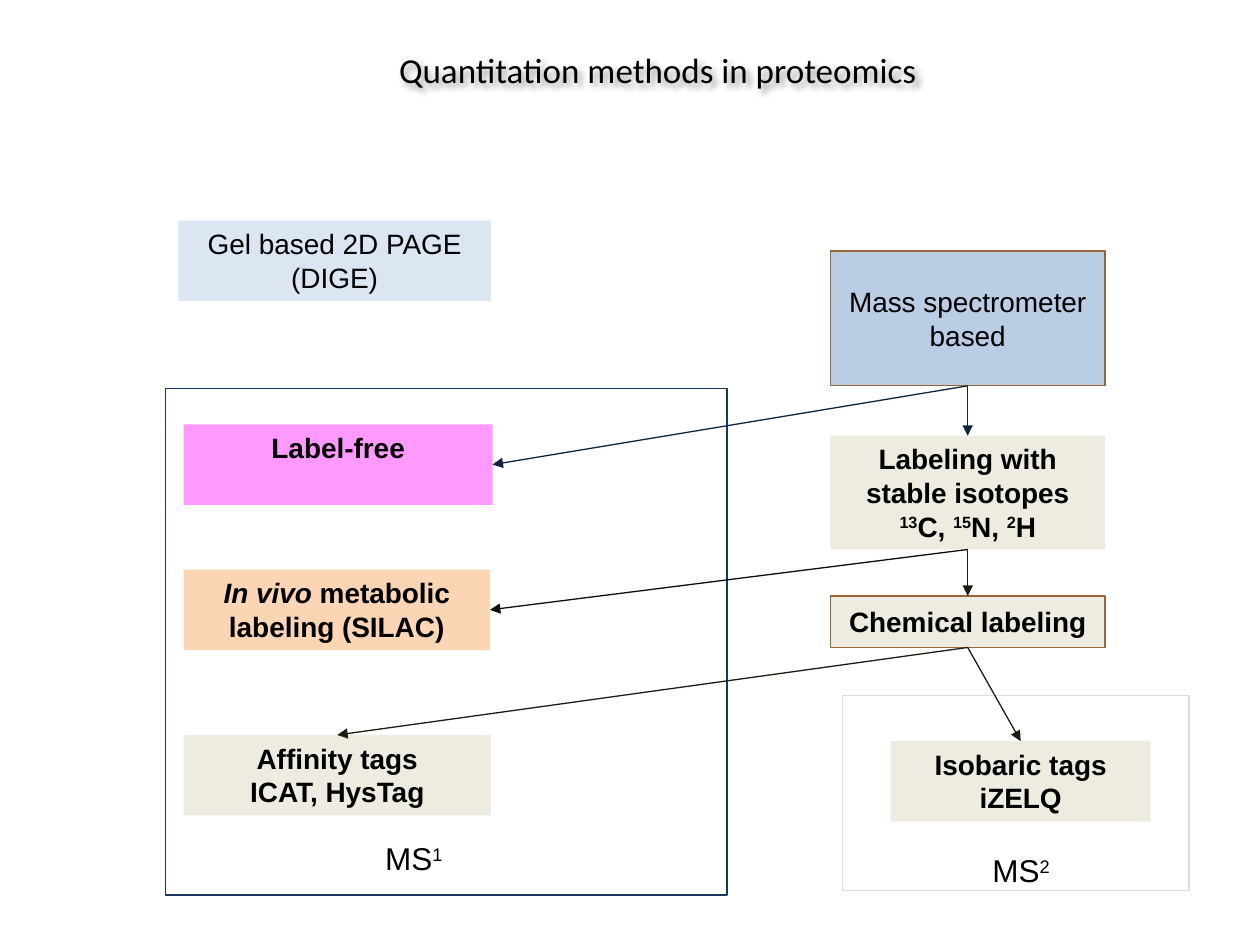
from lxml.etree import SubElement
from pptx import Presentation
from pptx.dml.color import RGBColor
from pptx.enum.shapes import MSO_CONNECTOR, MSO_SHAPE
from pptx.enum.text import MSO_ANCHOR, PP_ALIGN
from pptx.oxml import parse_xml
from pptx.oxml.ns import nsdecls, qn
from pptx.util import Pt

COLORS = {
    "text": "000000", "gel": "DCE6F2", "spectrometer": "B9CDE5", "label_free": "FF99FF",
    "metabolic": "FCD5B5", "chemistry": "EEECE1", "brown": "996633",
    "ms1_frame": "17375E", "ms2_frame": "DDDDDD", "shadow": "000000",
    "navy": "0F243E", "black": "0D0D0D", "olive": "1E1C11",
}
BOTTOM, TOP, RIGHT = 2, 0, 3
PAIR_HEIGHT = 46


def color(name):
    """Return the named colour."""
    return RGBColor.from_string(COLORS[name])


def write_text(shape, lines, size, font="Arial", bold=False, align=PP_ALIGN.CENTER):
    """Fill a shape with lines, each a list of (text, style) runs."""
    frame = shape.text_frame
    for index, line in enumerate(lines):
        paragraph = frame.paragraphs[0] if index == 0 else frame.add_paragraph()
        paragraph.alignment = align
        paragraph.font.name = font
        paragraph.font.size = Pt(size)
        paragraph.font.bold = bold
        paragraph.font.color.rgb = color("text")
        for text, style in line:
            run = paragraph.add_run()
            run.text = text
            if style == "italic":
                run.font.italic = True
            elif style == "super":
                run.font._element.set("baseline", "30000")


def add_box(slide, box, fill=None, border=None):
    """Add a rectangle with an optional fill and border."""
    shape = slide.shapes.add_shape(MSO_SHAPE.RECTANGLE, *map(Pt, box))
    shape.shadow.inherit = False
    if fill:
        shape.fill.solid()
        shape.fill.fore_color.rgb = color(fill)
    else:
        shape.fill.background()
    if border:
        shape.line.color.rgb = color(border)
        shape.line.width = Pt(0.75)
    else:
        shape.line.fill.background()
    return shape


def add_method(slide, box, lines, fill, border=None, bold=True):
    """Add a method box; bordered boxes centre their text without wrapping."""
    shape = add_box(slide, box, fill, border)
    shape.text_frame.word_wrap = border is None
    shape.text_frame.vertical_anchor = MSO_ANCHOR.MIDDLE if border else MSO_ANCHOR.TOP
    write_text(shape, lines, 16, bold=bold)
    return shape


def add_level(slide, left, top, number):
    """Add an MS level caption."""
    caption = slide.shapes.add_textbox(Pt(left), Pt(top), Pt(48), Pt(29))
    caption.text_frame.word_wrap = False
    write_text(caption, [[("MS", None), (number, "super")]], 18, align=PP_ALIGN.LEFT)


def add_arrow(slide, source, target, target_side, line_color):
    """Join the bottom of one box to a side of another with an arrow."""
    arrow = slide.shapes.add_connector(MSO_CONNECTOR.STRAIGHT, 0, 0, 0, 0)
    arrow.begin_connect(source, BOTTOM)
    arrow.end_connect(target, target_side)
    arrow.line.color.rgb = color(line_color)
    arrow.line.width = Pt(0.75)
    SubElement(arrow.line._get_or_add_ln(), qn("a:tailEnd"), type="triangle")
    SubElement(arrow._element.spPr, qn("a:effectLst"))


def add_title(slide, box):
    """Add the shadowed slide title."""
    title = slide.shapes.add_textbox(*map(Pt, box))
    title.text_frame.word_wrap = True
    title.text_frame.margin_left = Pt(60)
    write_text(title, [[("Quantitation methods in proteomics", None)]], 20, "Calibri",
               align=PP_ALIGN.LEFT)
    title._element.spPr.append(parse_xml(
        f'<a:effectLst {nsdecls("a")}><a:outerShdw blurRad="50800" dist="38100" dir="2700000">'
        f'<a:srgbClr val="{COLORS["shadow"]}"><a:alpha val="40000"/></a:srgbClr>'
        '</a:outerShdw></a:effectLst>'))


def add_ms1_panel(slide, box):
    """Add the MS1 frame and return its three method boxes."""
    left, top = box[:2]
    methods = [
        (20.5, 176.5, "label_free", [[("Label-free", None)]]),
        (103.5, 175, "metabolic",
         [[("In vivo", "italic"), (" metabolic labeling (SILAC)", None)]]),
        (198, 175.5, "chemistry", [[("Affinity tags", None)], [("ICAT, HysTag", None)]]),
    ]
    add_box(slide, box, border="ms1_frame")
    add_level(slide, left + 118.5, top + 254, "1")
    return [add_method(slide, (left + 10.5, top + offset, width, PAIR_HEIGHT), lines, fill)
            for offset, width, fill, lines in methods]


def add_ms2_panel(slide, box):
    """Add the MS2 frame and return its method box."""
    left, top = box[:2]
    add_box(slide, box, border="ms2_frame")
    add_level(slide, left + 78.5, top + 85.5, "2")
    return add_method(slide, (left + 27.5, top + 26, 148.5, PAIR_HEIGHT),
                      [[("Isobaric tags", None)], [("iZELQ", None)]], "chemistry")


def add_spectrometer_column(slide, box):
    """Add the mass spectrometer chain and return its three boxes."""
    left, top, width, height = box
    spectrometer = add_method(
        slide, (left, top, width, 77), [[("Mass spectrometer", None)], [("based", None)]],
        "spectrometer", "brown", False)
    isotopes = [("13", "super"), ("C, ", None), ("15", "super"), ("N, ", None),
                ("2", "super"), ("H", None)]
    labeling = add_method(slide, (left, top + 105.5, width, 65),
                          [[("Labeling with stable isotopes", None)], isotopes], "chemistry")
    chemical = add_method(slide, (left, top + height - 29.5, width, 29.5),
                          [[("Chemical labeling", None)]], "chemistry", "brown")
    return spectrometer, labeling, chemical


def main():
    """Build and save the slide."""
    presentation = Presentation()
    presentation.slide_width, presentation.slide_height = Pt(720), Pt(540)
    slide = presentation.slides.add_slide(presentation.slide_layouts[6])
    add_title(slide, (168, 24, 408, 32))
    add_method(slide, (102, 126, 178.5, PAIR_HEIGHT),
               [[("Gel based 2D PAGE (DIGE)", None)]], "gel", bold=False)
    label_free, metabolic, affinity = add_ms1_panel(slide, (94.5, 222, 321, 289.5))
    isobaric = add_ms2_panel(slide, (481.5, 397.5, 198, 111.5))
    spectrometer, labeling, chemical = add_spectrometer_column(slide, (474.5, 143.5, 157, 226.5))
    for source, target, side, line_color in [
        (spectrometer, label_free, RIGHT, "navy"),
        (spectrometer, labeling, TOP, "navy"),
        (labeling, metabolic, RIGHT, "black"),
        (labeling, chemical, TOP, "olive"),
        (chemical, affinity, TOP, "olive"),
        (chemical, isobaric, TOP, "olive"),
    ]:
        add_arrow(slide, source, target, side, line_color)
    presentation.save("out.pptx")


if __name__ == "__main__":
    main()
